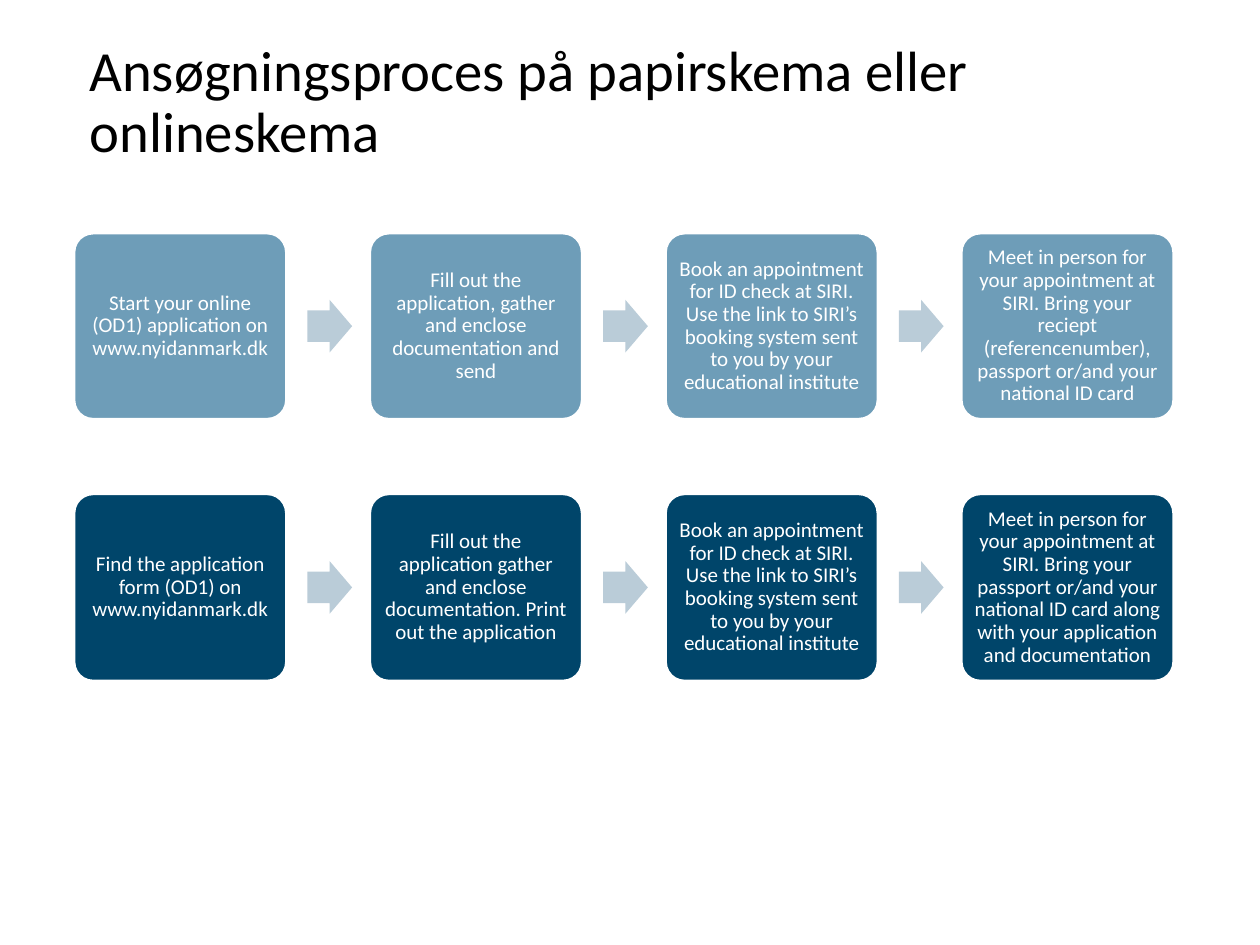
from pptx import Presentation
from pptx.dml.color import RGBColor
from pptx.enum.shapes import MSO_SHAPE as Shape
from pptx.enum.text import MSO_ANCHOR as Anchor, MSO_AUTO_SIZE as AutoSize, PP_ALIGN as Align
from pptx.util import Pt


def color(value):
    return RGBColor.from_string(value)


def format_text(text_frame, size, value, alignment, anchor):
    text_frame.word_wrap = True
    text_frame.auto_size = AutoSize.NONE
    text_frame.vertical_anchor = anchor
    paragraph = text_frame.paragraphs[0]
    paragraph.alignment = alignment
    paragraph.line_spacing = 0.9
    for run in paragraph.runs:
        run.font.name = "Calibri"
        run.font.size = Pt(size)
        run.font.color.rgb = color(value)


presentation = Presentation()
presentation.slide_width, presentation.slide_height = Pt(720), Pt(540)
slide = presentation.slides.add_slide(presentation.slide_layouts[5])

title = slide.shapes.title
title.left, title.top, title.width, title.height = Pt(43.9), Pt(28.8), Pt(627), Pt(69.1)
title.text_frame.text = "Ansøgningsproces på papirskema eller onlineskema"
format_text(title.text_frame, 32.4, "000000", Align.LEFT, Anchor.BOTTOM)

booking = (
    "Book an appointment for ID check at SIRI. Use the link to SIRI’s "
    "booking system sent to you by your educational institute"
)
processes = [
    (133.5, 105.8, "6E9DB8", [
        "Start your online (OD1) application on www.nyidanmark.dk",
        "Fill out the application, gather and enclose documentation and send",
        booking,
        "Meet in person for your appointment at SIRI. Bring your reciept "
        "(referencenumber), passport or/and your national ID card",
    ]),
    (282.5, 106.4, "00456A", [
        "Find the application form (OD1) on www.nyidanmark.dk",
        "Fill out the application gather and enclose documentation. Print out the application",
        booking,
        "Meet in person for your appointment at SIRI. Bring your passport or/and your "
        "national ID card along with your application and documentation",
    ]),
]

first_left, step_pitch, step_width = 42.6, 169, 120.8
arrow_offset, arrow_width, arrow_height = 133, 25.6, 30

for top, height, fill, steps in processes:
    for index, text in enumerate(steps):
        left = first_left + index * step_pitch
        step = slide.shapes.add_shape(
            Shape.ROUNDED_RECTANGLE, Pt(left), Pt(top), Pt(step_width), Pt(height))
        step.adjustments[0] = 0.1
        step.shadow.inherit = False
        step.fill.solid()
        step.fill.fore_color.rgb = color(fill)
        step.line.color.rgb = color("FFFFFF")
        step.line.width = Pt(1)
        text_frame = step.text_frame
        text_frame.text = text
        text_frame.margin_left = text_frame.margin_right = Pt(3.6)
        text_frame.margin_top = text_frame.margin_bottom = Pt(3.6)
        format_text(text_frame, 12, "FFFFFF", Align.CENTER, Anchor.MIDDLE)

        if index < len(steps) - 1:
            arrow = slide.shapes.add_shape(
                Shape.RIGHT_ARROW, Pt(left + arrow_offset),
                Pt(top + (height - arrow_height) / 2), Pt(arrow_width), Pt(arrow_height))
            arrow.adjustments[0] = 0.6
            arrow.adjustments[1] = 0.5
            arrow.shadow.inherit = False
            arrow.fill.solid()
            arrow.fill.fore_color.rgb = color("BACCD8")
            arrow.line.fill.background()

presentation.save("out.pptx")
